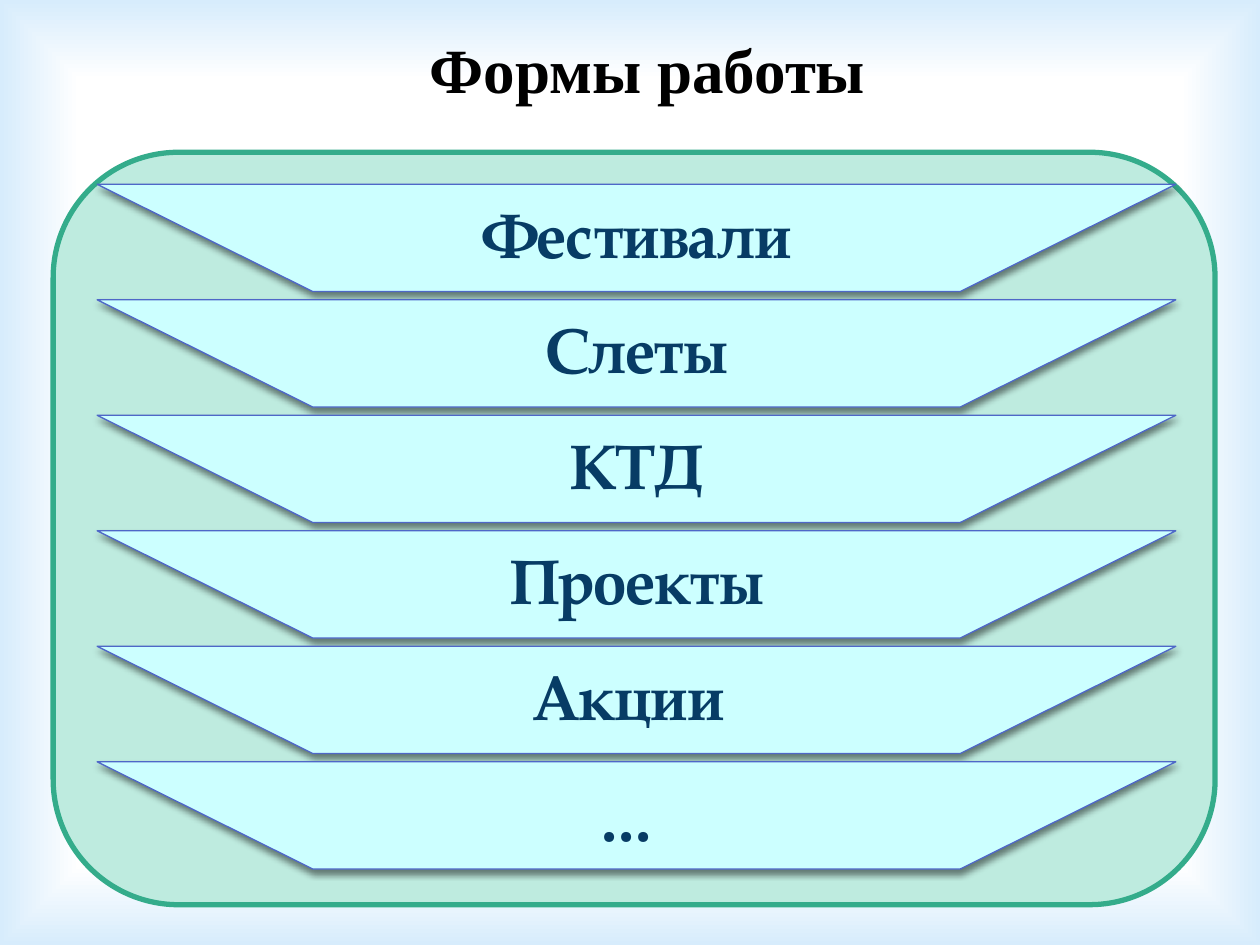
import dataclasses

import lxml.etree
import pptx
import pptx.dml.color
import pptx.enum.shapes
import pptx.enum.text
import pptx.oxml
import pptx.oxml.ns
import pptx.util

Pt = pptx.util.Pt
RGBColor = pptx.dml.color.RGBColor

WHITE = RGBColor(0xFF, 0xFF, 0xFF)
BLACK = RGBColor(0x00, 0x00, 0x00)
EDGE_BLUE = RGBColor(0xD7, 0xEC, 0xFC)
MINT = RGBColor(0xBE, 0xEB, 0xDF)
GREEN = RGBColor(0x34, 0xAC, 0x8B)
PALE_CYAN = RGBColor(0xCC, 0xFF, 0xFF)
VIOLET = RGBColor(0x4E, 0x67, 0xC8)
NAVY = RGBColor(0x07, 0x3C, 0x65)

PAGE_WIDTH, PAGE_HEIGHT = 720, 540
BAND_LEFT, BAND_TOP = 55.5, 105.3
BAND_WIDTH, BAND_HEIGHT = 616.4, 61.3
BAND_STEP = 66
BAND_SLANT = BAND_WIDTH / 5


@dataclasses.dataclass
class Band:
    label: str
    tail_size: int = 0


BANDS = [
    Band("Фестивали"),
    Band("Слеты"),
    Band("КТД"),
    Band("Проекты"),
    Band("Акции "),
    Band("…", tail_size=47),
]


def add_glow(page) -> None:
    glow = page.shapes.add_shape(
        pptx.enum.shapes.MSO_SHAPE.RECTANGLE, 0, 0, Pt(PAGE_WIDTH), Pt(PAGE_HEIGHT)
    )
    glow.shadow.inherit = False
    glow.line.fill.background()
    properties = glow._element.spPr
    gradient = pptx.oxml.parse_xml(
        f'<a:gradFill {pptx.oxml.ns.nsdecls("a")} rotWithShape="1"><a:gsLst>'
        f'<a:gs pos="83000"><a:srgbClr val="{WHITE}"/></a:gs>'
        f'<a:gs pos="100000"><a:srgbClr val="{EDGE_BLUE}"/></a:gs></a:gsLst>'
        '<a:path path="rect">'
        '<a:fillToRect l="50000" t="50000" r="50000" b="50000"/></a:path></a:gradFill>'
    )
    properties.find(pptx.oxml.ns.qn("a:prstGeom")).addnext(gradient)
    page.shapes._spTree.insert(2, glow._element)


def format_title(title) -> None:
    title.left, title.top, title.width, title.height = Pt(12), Pt(13.7), Pt(688), Pt(51)
    title.text_frame.text = "Формы работы"
    title.text_frame.vertical_anchor = pptx.enum.text.MSO_ANCHOR.MIDDLE
    para = title.text_frame.paragraphs[0]
    para.alignment = pptx.enum.text.PP_ALIGN.CENTER
    para._p.get_or_add_pPr().set("indent", str(Pt(28)))
    set_font(para.font, "Times New Roman", BLACK)


def set_font(font, name: str, color: RGBColor) -> None:
    font.name = name
    font.size = Pt(36)
    font.bold = True
    font.color.rgb = color


def add_panel(page) -> None:
    panel = page.shapes.add_shape(
        pptx.enum.shapes.MSO_SHAPE.ROUNDED_RECTANGLE, Pt(30.4), Pt(87), Pt(664), Pt(430)
    )
    panel.shadow.inherit = False
    panel.fill.solid()
    panel.fill.fore_color.rgb = MINT
    panel.line.color.rgb = GREEN
    panel.line.width = Pt(3)


def add_shadow(shape) -> None:
    shape.shadow.inherit = False
    effects = shape._element.spPr.find(pptx.oxml.ns.qn("a:effectLst"))
    shadow = lxml.etree.SubElement(
        effects, pptx.oxml.ns.qn("a:outerShdw"),
        blurRad=str(Pt(4)), dist=str(Pt(2)), dir="5400000", rotWithShape="0",
    )
    color = lxml.etree.SubElement(shadow, pptx.oxml.ns.qn("a:srgbClr"), val=str(BLACK))
    lxml.etree.SubElement(color, pptx.oxml.ns.qn("a:alpha"), val="48000")


def add_band(page, band: Band, top: float) -> None:
    right, bottom = BAND_LEFT + BAND_WIDTH, top + BAND_HEIGHT
    builder = page.shapes.build_freeform(Pt(BAND_LEFT), Pt(top))
    corners = [(right, top), (right - BAND_SLANT, bottom), (BAND_LEFT + BAND_SLANT, bottom)]
    builder.add_line_segments([(Pt(x), Pt(y)) for x, y in corners], close=True)
    shape = builder.convert_to_shape()
    shape.fill.solid()
    shape.fill.fore_color.rgb = PALE_CYAN
    shape.line.color.rgb = VIOLET
    shape.line.width = Pt(0.75)
    add_shadow(shape)

    box = shape.text_frame
    box.word_wrap = True
    box.margin_top = box.margin_bottom = 0
    box.vertical_anchor = pptx.enum.text.MSO_ANCHOR.MIDDLE
    para = box.paragraphs[0]
    para.alignment = pptx.enum.text.PP_ALIGN.CENTER
    para.line_spacing = 0.9
    set_font(para.font, "TeX Gyre Pagella", NAVY)
    para.add_run().text = band.label
    if band.tail_size:
        span = para.add_run()
        span.text = " "
        span.font.size = Pt(band.tail_size)
        span.font.bold = False


def main() -> None:
    deck = pptx.Presentation()
    deck.slide_width, deck.slide_height = Pt(PAGE_WIDTH), Pt(PAGE_HEIGHT)
    page = deck.slides.add_slide(deck.slide_layouts.get_by_name("Title Only"))
    add_glow(page)
    format_title(page.shapes.title)
    add_panel(page)
    for index, band in enumerate(BANDS):
        add_band(page, band, BAND_TOP + index * BAND_STEP)
    deck.save("out.pptx")


if __name__ == "__main__":
    main()
